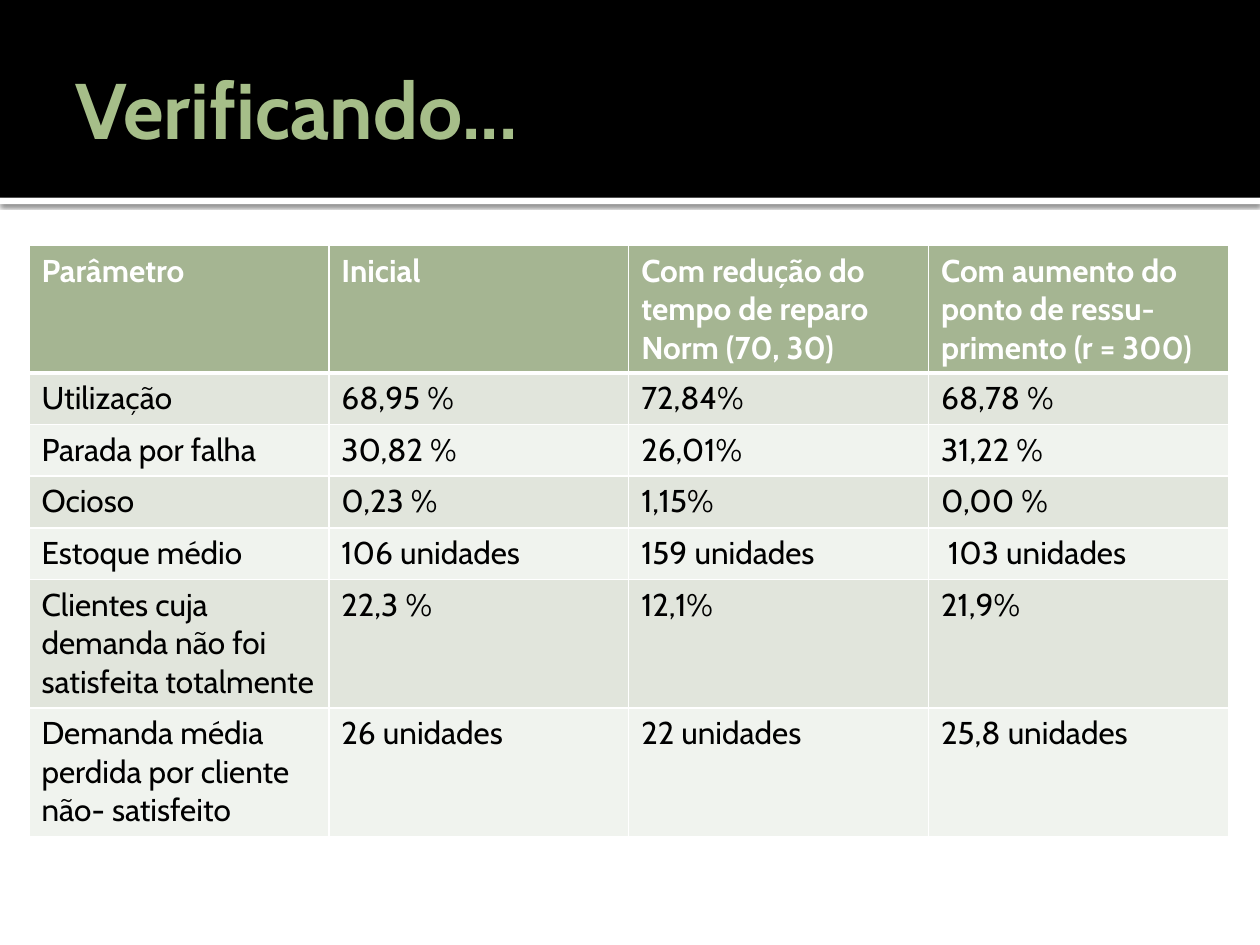
from pptx import Presentation
from pptx.dml.color import RGBColor
from pptx.enum.shapes import MSO_SHAPE as SHAPE
from pptx.enum.text import MSO_ANCHOR as ANCHOR
from pptx.oxml import parse_xml
from pptx.oxml.ns import nsdecls
from pptx.util import Inches, Pt

COLORS = {
    "white": "FFFFFF", "black": "000000", "title": "A6BE89",
    "header": "A5B592", "odd": "E1E5DC", "even": "F0F3EE",
}
ROWS = [
    ["Parâmetro", "Inicial", "Com redução do tempo de reparo Norm (70, 30)",
     "Com aumento do ponto de ressu-primento (r = 300)"],
    ["Utilização", "68,95 %", "72,84%", "68,78 %"],
    ["Parada por falha", "30,82 %", "26,01%", "31,22 %"],
    ["Ocioso", "0,23 %", "1,15%", "0,00 %"],
    ["Estoque médio", "106 unidades", "159 unidades", " 103 unidades"],
    ["Clientes cuja demanda não foi satisfeita totalmente", "22,3 %", "12,1%", "21,9%"],
    ["Demanda média perdida por cliente não- satisfeito", "26 unidades",
     "22 unidades", "25,8 unidades"],
]
ROW_HEIGHTS = [1.01] + [0.41] * 4 + [1.02] * 2


class SlideBuilder:
    """Draws styled elements on the current slide."""

    font = "Cabin"

    def __init__(self, slide):
        self.slide = slide

    def color(self, name):
        return RGBColor.from_string(COLORS[name])

    def style(self, p, size, color, bold):
        for r in p.runs:
            r.font.name = self.font
            r.font.size = Pt(size)
            r.font.bold = bold
            r.font.color.rgb = self.color(color)

    def band(self, top, height, color, shadow=False):
        s = self.slide.shapes.add_shape(
            SHAPE.RECTANGLE, 0, Inches(top), Inches(10), Inches(height))
        s.shadow.inherit = False
        s.fill.solid()
        s.fill.fore_color.rgb = self.color(color)
        s.line.fill.background()
        if shadow:
            effects = s.element.spPr.find("{*}effectLst")
            effects.append(parse_xml(
                f'<a:outerShdw {nsdecls("a")} blurRad="{Pt(2.5)}" dist="{Pt(0.8)}" '
                f'dir="5400000" algn="t" rotWithShape="0"><a:srgbClr val="{COLORS["black"]}">'
                '<a:alpha val="60000"/></a:srgbClr></a:outerShdw>'))

    def title(self, text):
        s = self.slide.shapes.add_textbox(Inches(0.5), Inches(0.17), Inches(9), Inches(1.37))
        tf = s.text_frame
        tf.word_wrap = True
        tf.vertical_anchor = ANCHOR.MIDDLE
        tf.margin_right = Inches(0.05)
        tf.text = text
        self.style(tf.paragraphs[0], 45, "title", True)

    def borders(self, cell, bottom):
        tcPr = cell._tc.get_or_add_tcPr()
        for side, width in (("L", 1), ("R", 1), ("T", 1), ("B", bottom)):
            tcPr.append(parse_xml(
                f'<a:ln{side} {nsdecls("a")} w="{Pt(width)}"><a:solidFill>'
                f'<a:srgbClr val="{COLORS["white"]}"/></a:solidFill></a:ln{side}>'))

    def table(self, left, top, col_width, heights, rows):
        cols = len(rows[0])
        table = self.slide.shapes.add_table(
            len(rows), cols, Inches(left), Inches(top),
            Inches(col_width * cols), Inches(sum(heights))).table
        for col in table.columns:
            col.width = Inches(col_width)
        for i, (values, height) in enumerate(zip(rows, heights)):
            table.rows[i].height = Inches(height)
            head = i == 0
            fill = "header" if head else "odd" if i % 2 else "even"
            for j, value in enumerate(values):
                cell = table.cell(i, j)
                cell.text_frame.text = value
                self.style(cell.text_frame.paragraphs[0], 18,
                           "white" if head else "black", head)
                self.borders(cell, 3 if head else 1)
                cell.fill.solid()
                cell.fill.fore_color.rgb = self.color(fill)


def main():
    prs = Presentation()
    prs.slide_width, prs.slide_height = Inches(10), Inches(7.5)
    builder = SlideBuilder(prs.slides.add_slide(prs.slide_layouts[6]))
    builder.band(1.57, 0.05, "white", shadow=True)
    builder.band(0, 1.57, "black")
    builder.title("Verificando...")
    builder.table(0.23, 1.95, 2.38, ROW_HEIGHTS, ROWS)
    prs.save("out.pptx")


if __name__ == "__main__":
    main()
